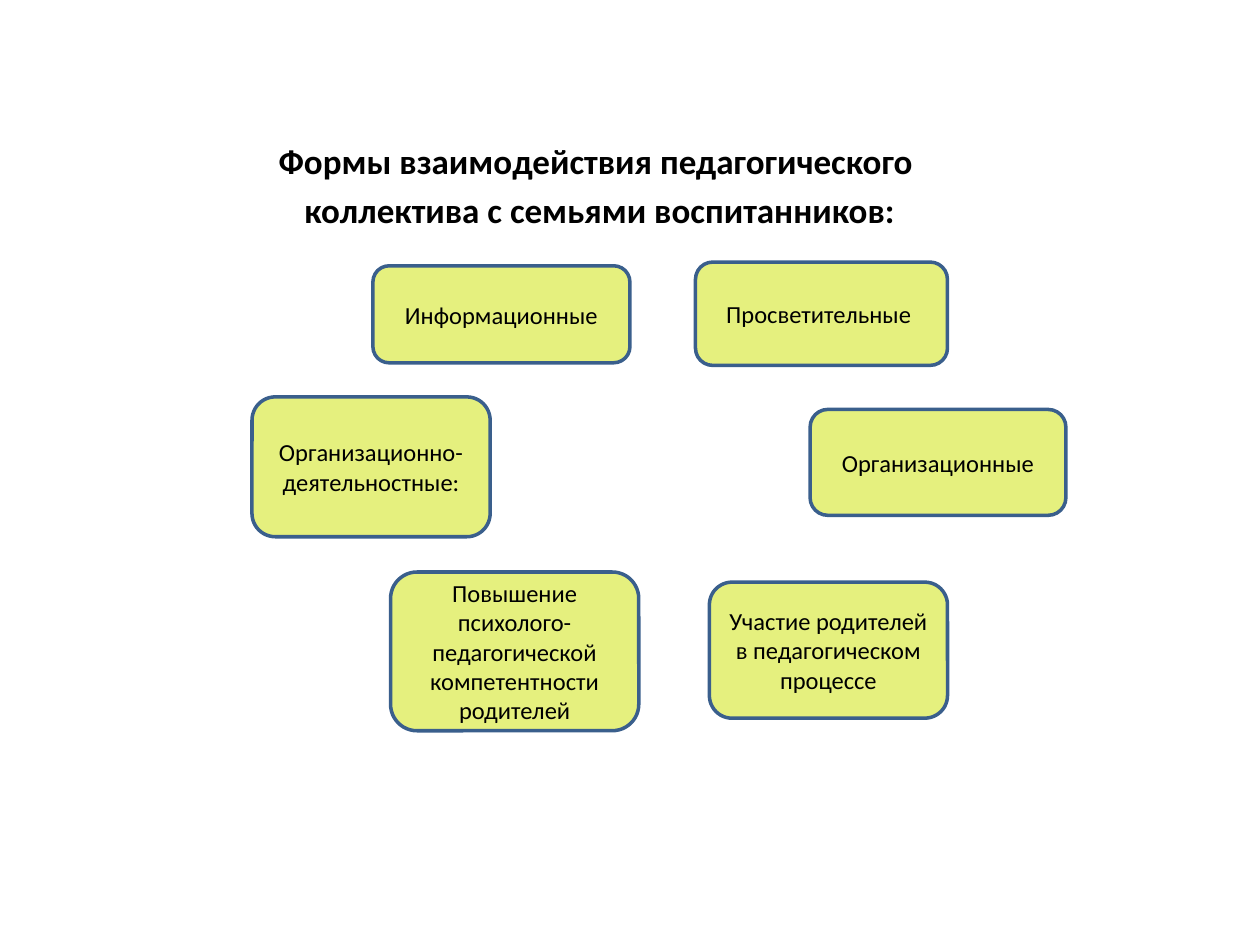
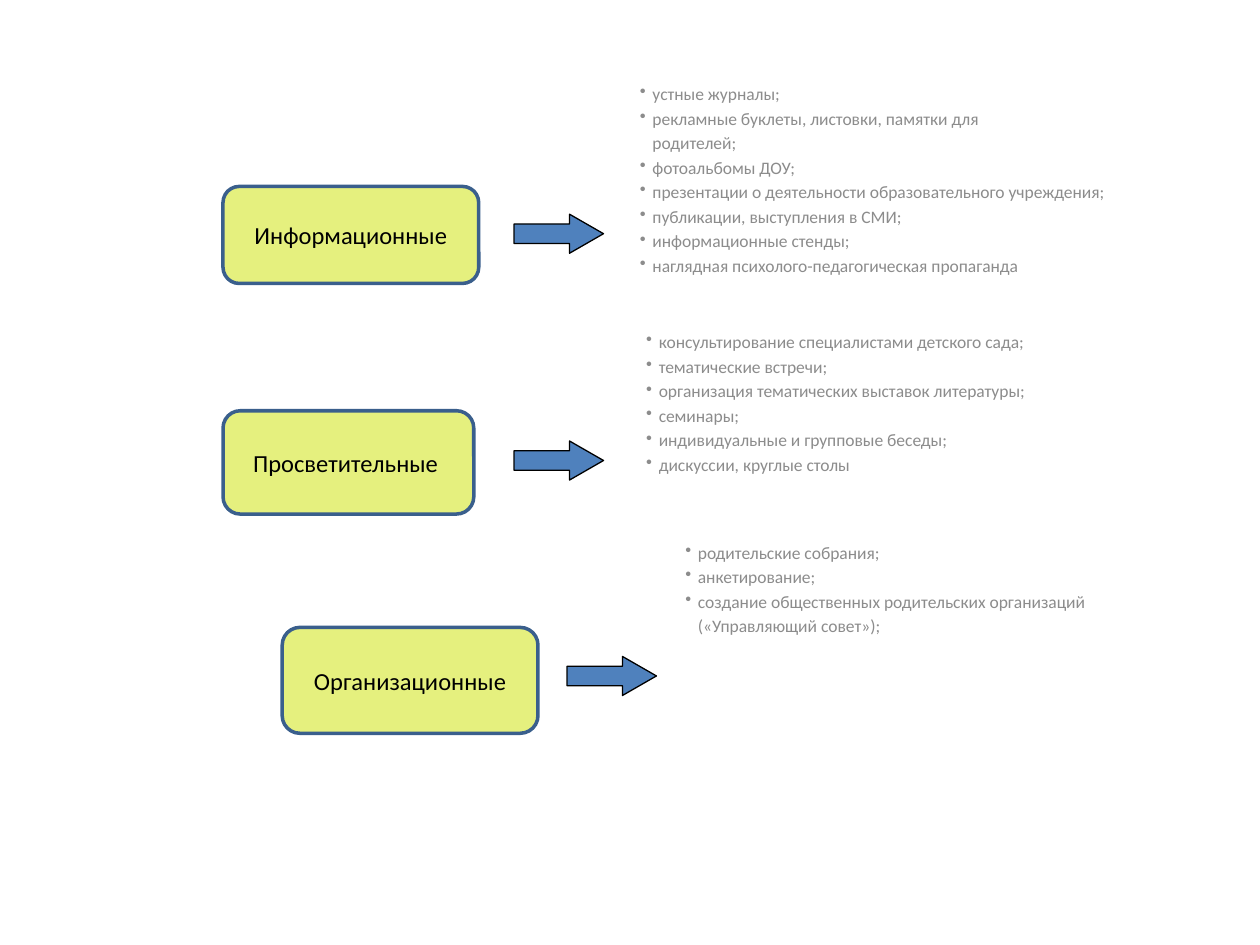
from lxml import etree
from pptx import Presentation
from pptx.dml.color import RGBColor
from pptx.enum.shapes import MSO_SHAPE
from pptx.enum.text import MSO_ANCHOR, MSO_AUTO_SIZE, PP_ALIGN
from pptx.oxml.ns import qn
from pptx.util import Inches, Pt

ROUNDED, ARROW = MSO_SHAPE.ROUNDED_RECTANGLE, MSO_SHAPE.RIGHT_ARROW
CENTER, LEFT = PP_ALIGN.CENTER, PP_ALIGN.LEFT
TOP, MIDDLE, BOTTOM = MSO_ANCHOR.TOP, MSO_ANCHOR.MIDDLE, MSO_ANCHOR.BOTTOM
TITLE_ONLY, BLANK = 5, 6
FONT = "Calibri"
COLORS = {"text": "000000", "list": "8C8C8C", "form": "E5F07E",
          "form_line": "3A5F8C", "arrow": "4F81BD", "arrow_line": "000000"}
BULLET_INDENT = Inches(0.1)


def write(shape, lines, size=14, color="text", bold=False, align=CENTER,
          anchor=MIDDLE, gap=0, bullets=False):
    """Fill a shape with paragraphs; in a list, a line led by "+" goes on without a bullet."""
    frame = shape.text_frame
    frame.word_wrap = True
    frame.auto_size = MSO_AUTO_SIZE.NONE
    frame.vertical_anchor = anchor
    for number, line in enumerate(lines):
        paragraph = frame.add_paragraph() if number else frame.paragraphs[0]
        paragraph.alignment = align
        paragraph.space_before = Pt(gap if number else 0)
        if bullets:
            properties = paragraph._p.get_or_add_pPr()
            properties.set("marL", str(BULLET_INDENT))
            if not line.startswith("+"):
                properties.set("indent", str(-BULLET_INDENT))
                etree.SubElement(properties, qn("a:buChar")).set("char", "•")
        run = paragraph.add_run()
        run.text = line.removeprefix("+")
        run.font.name, run.font.size, run.font.bold = FONT, Pt(size), bold
        run.font.color.rgb = RGBColor.from_string(COLORS[color])


def add_figure(slide, kind, place, role, line_width):
    figure = slide.shapes.add_shape(kind, *map(Inches, place))
    figure.shadow.inherit = False
    figure.fill.solid()
    figure.fill.fore_color.rgb = RGBColor.from_string(COLORS[role])
    figure.line.color.rgb = RGBColor.from_string(COLORS[role + "_line"])
    figure.line.width = Pt(line_width)
    return figure


deck = Presentation()
deck.slide_width, deck.slide_height = Inches(10), Inches(7.5)

# Slide 1: forms of interaction with families
overview = deck.slides.add_slide(deck.slide_layouts[TITLE_ONLY])
title = overview.shapes.title
title.left, title.top, title.width, title.height = map(Inches, (1.14, 1.17, 7.24, 0.71))
write(title, ["Формы взаимодействия педагогического ", "коллектива с семьями воспитанников:"],
      size=20, bold=True, anchor=BOTTOM, gap=4)

forms = [
    ("Информационные", (2.96, 2.11, 2.04, 0.77)),
    ("Просветительные ", (5.52, 2.08, 2, 0.82)),
    ("Организационно-деятельностные:", (2, 3.15, 1.89, 1.11)),
    ("Организационные", (6.43, 3.25, 2.03, 0.84)),
    ("Повышение психолого-педагогической компетентности родителей", (3.1, 4.54, 1.97, 1.26)),
    ("Участие родителей в педагогическом процессе", (5.63, 4.62, 1.89, 1.08)),
]
for form, place in forms:
    write(add_figure(overview, ROUNDED, place, "form", 2), [form])

# Slide 2: activities within three of the forms
details = deck.slides.add_slide(deck.slide_layouts[BLANK])
activities_by_form = [
    ("Информационные", (1.77, 1.48, 2.03, 0.77), (4.08, 1.7), (4.98, 0.61), [
        "устные журналы;",
        "рекламные буклеты, листовки, памятки для",
        "+родителей;",
        "фотоальбомы ДОУ;",
        "презентации о деятельности образовательного учреждения;",
        "публикации, выступления в СМИ;",
        "информационные стенды;",
        "наглядная психолого-педагогическая пропаганда"]),
    ("Просветительные ", (1.77, 3.26, 1.99, 0.82), (4.08, 3.5), (5.03, 2.58), [
        "консультирование специалистами детского сада;",
        "тематические встречи;",
        "организация тематических выставок литературы;",
        "семинары;",
        "индивидуальные и групповые беседы;",
        "дискуссии, круглые столы"]),
    ("Организационные", (2.24, 4.98, 2.03, 0.84), (4.5, 5.21), (5.34, 4.25), [
        "родительские собрания;",
        "анкетирование;",
        "создание общественных родительских организаций",
        "+(«Управляющий совет»);"]),
]
for form, form_place, arrow_corner, list_corner, activities in activities_by_form:
    write(add_figure(details, ROUNDED, form_place, "form", 2), [form])
    arrow = add_figure(details, ARROW, (*arrow_corner, 0.71, 0.31), "arrow", 0.75)
    arrow.adjustments[1] = 0.87
    list_place = (*list_corner, 4.02, 0.1 + 0.2 * len(activities))
    activity_list = details.shapes.add_textbox(*map(Inches, list_place))
    write(activity_list, activities, size=10, color="list", align=LEFT,
          anchor=TOP, gap=2, bullets=True)

deck.save("out.pptx")
